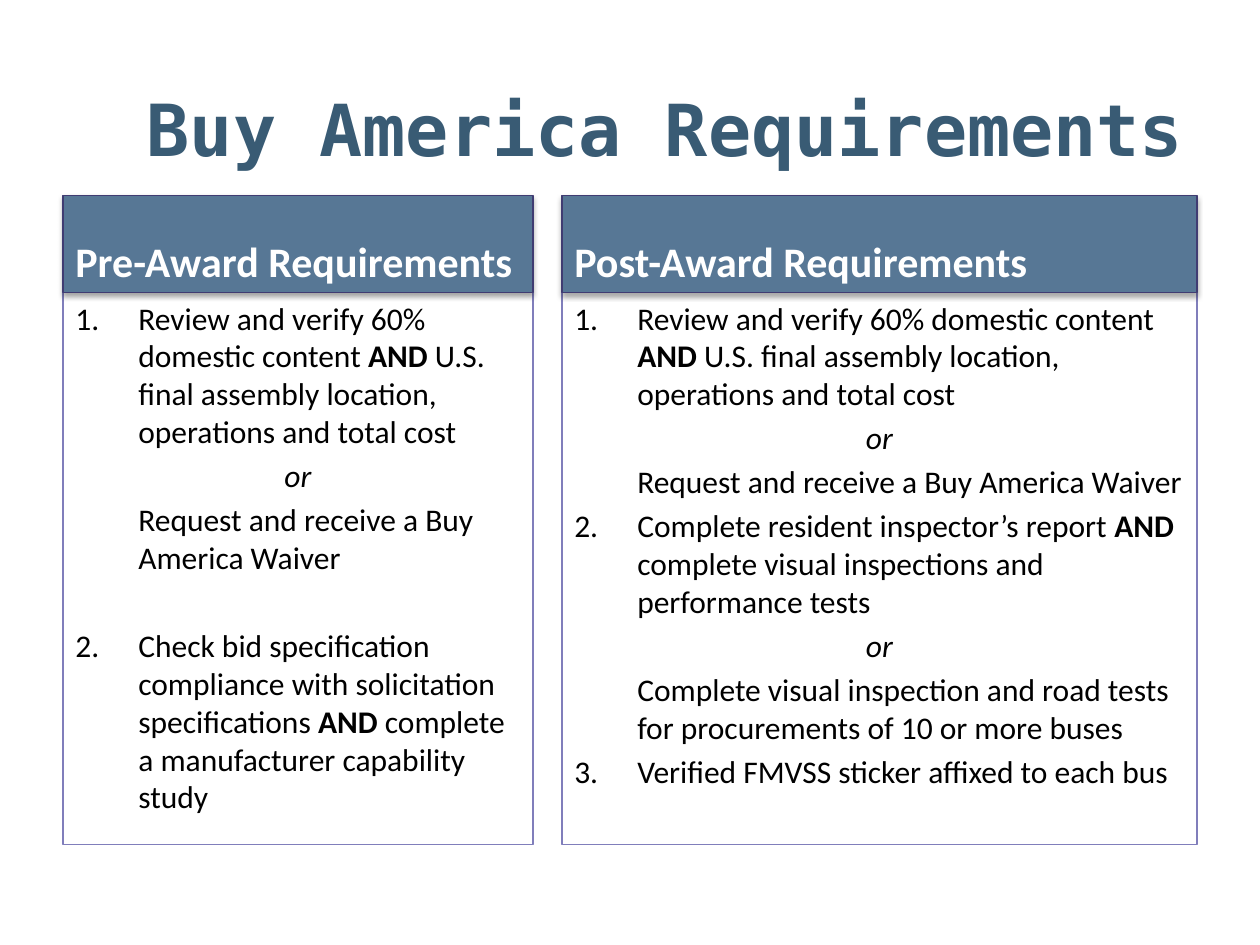
import pptx
import pptx.util
import pptx.dml.color
import pptx.enum.shapes
import pptx.enum.text
import pptx.oxml
import pptx.oxml.ns

SCALE = 9144  # EMU per px, 100 px to the inch
THEME = {
    "title": "395B74", "head": "577795", "edge": "403C72", "line": "807EBB",
    "text": "000000", "light": "FFFFFF",
    "sans": "Calibri", "mono": "DejaVu Sans Mono",
    "big": 41, "mid": 24, "small": 18,
}
SHADOW = (
    '<a:effectLst %s><a:outerShdw blurRad="39370" dist="22860" dir="5400000" '
    'rotWithShape="0"><a:srgbClr val="000000"><a:alpha val="35000"/></a:srgbClr>'
    '</a:outerShdw></a:effectLst>' % pptx.oxml.ns.nsdecls("a")
)
ALIGN = pptx.enum.text.PP_ALIGN
ANCHOR = pptx.enum.text.MSO_ANCHOR
HANG, GAP, WIDE = 50, 3.6, 28.8  # indent in px, paragraph gaps in points


def box(left, top, width, height, anchor, fill=None, line=None):
    area = [n * SCALE for n in (left, top, width, height)]
    shape = slide.shapes.add_shape(pptx.enum.shapes.MSO_SHAPE.RECTANGLE, *area)
    shape.shadow.inherit = False
    for part, tint in ((shape.fill, fill), (shape.line.fill, line)):
        if tint:
            part.solid()
            part.fore_color.rgb = pptx.dml.color.RGBColor.from_string(THEME[tint])
        else:
            part.background()
    if line:
        shape.line.width = pptx.util.Pt(0.75)
    shape.text_frame.word_wrap = True
    shape.text_frame.vertical_anchor = anchor
    return shape


def style(para, face, size, tint, bold=False, align=ALIGN.LEFT):
    para.alignment = align
    for run in para.runs:
        run.font.name = THEME[face]
        run.font.size = pptx.util.Pt(THEME[size])
        run.font.bold = bold or run.text == "AND"
        run.font.italic = run.text == "or"
        run.font.color.rgb = pptx.dml.color.RGBColor.from_string(THEME[tint])


deck = pptx.Presentation()
deck.slide_width = 1000 * SCALE
deck.slide_height = 750 * SCALE
slide = deck.slides.add_slide(deck.slide_layouts[6])

# Title
title = box(50, 48, 900, 107, ANCHOR.MIDDLE)
title.text_frame.text = "Buy America Requirements"
style(title.text_frame.paragraphs[0], "mono", "big", "title", True, ALIGN.RIGHT)

# Columns: left, width, heading, then (number, space before, text)
REVIEW = (1, 0, "Review and verify 60% domestic content |AND| U.S. final assembly "
          "location, operations and total cost")
OR = (None, GAP, "or")
WAIVER = (None, GAP, "Request and receive a Buy America Waiver")
COLUMNS = [
    (50, 373, "Pre-Award Requirements", [
        REVIEW, OR, WAIVER,
        (2, WIDE, "Check bid specification compliance with solicitation "
         "specifications |AND| complete a manufacturer capability study"),
    ]),
    (446, 504, "Post-Award Requirements", [
        REVIEW, OR, WAIVER,
        (2, GAP, "Complete resident inspector’s report |AND| complete visual "
         "inspections and performance tests"),
        OR,
        (None, GAP, "Complete visual inspection and road tests for procurements "
         "of 10 or more buses"),
        (3, GAP, "Verified FMVSS sticker affixed to each bus"),
    ]),
]

for left, width, name, items in COLUMNS:
    # List body
    body = box(left, 232, width, 438, ANCHOR.TOP, line="line")
    for i, (num, gap, words) in enumerate(items):
        frame = body.text_frame
        para = frame.add_paragraph() if i else frame.paragraphs[0]
        para.space_before = pptx.util.Pt(gap)
        for piece in words.split("|"):
            para.add_run().text = piece
        if words != "or":
            props = para._p.get_or_add_pPr()
            props.set("marL", str(HANG * SCALE))
            props.set("indent", str(-HANG * SCALE if num else 0))
            if num:
                mark = pptx.oxml.parse_xml(
                    '<a:buAutoNum %s type="arabicPeriod" startAt="%d"/>'
                    % (pptx.oxml.ns.nsdecls("a"), num))
                props.append(mark)
        style(para, "sans", "small", "text",
              align=ALIGN.CENTER if words == "or" else ALIGN.LEFT)

    # Heading band
    head = box(left, 155, width, 77, ANCHOR.BOTTOM, "head", "edge")
    props = head._element.spPr
    props.remove(props.find(pptx.oxml.ns.qn("a:effectLst")))
    props.append(pptx.oxml.parse_xml(SHADOW))
    head.text_frame.text = name
    style(head.text_frame.paragraphs[0], "sans", "mid", "light", True)

deck.save("out.pptx")
